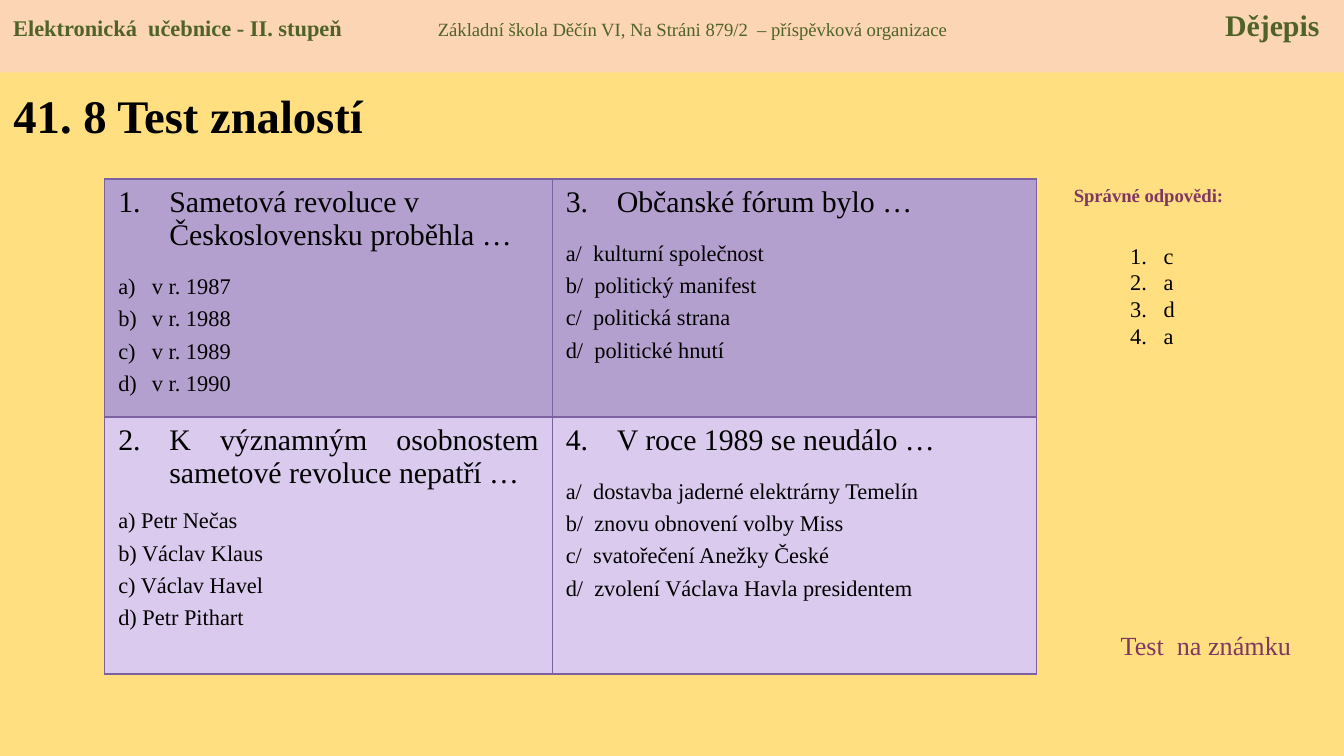
from dataclasses import dataclass

from lxml.etree import SubElement
from pptx import Presentation
from pptx.dml.color import RGBColor
from pptx.enum.shapes import MSO_SHAPE
from pptx.enum.text import MSO_ANCHOR, MSO_AUTO_SIZE, PP_ALIGN
from pptx.oxml import parse_xml
from pptx.oxml.ns import nsdecls, qn
from pptx.util import Inches, Length, Pt

FONT = "Times New Roman"
COLOURS = {
    "background": "FFDF80",
    "header": "FCD5B5",
    "header_text": "4F6228",
    "text": "000000",
    "accent": "813763",
    "border": "7D60A0",
    "row_0": "B3A0CE",
    "row_1": "DACAED",
}
WIDTH = Inches(10)
HEIGHT = Length(WIDTH * 9 // 16)
COLUMN_SHARES = (33.3, 36)
ROW_SHARES = (31.5, 34)


@dataclass(frozen=True)
class Box:
    left: float
    top: float
    width: float
    height: float

    def place(self) -> tuple[Length, ...]:
        return (across(self.left), down(self.top), across(self.width), down(self.height))


@dataclass(frozen=True)
class Question:
    row: int
    column: int
    text: str
    answers: tuple[str, ...]
    gap: float = 12
    lettered: bool = False
    align: PP_ALIGN = PP_ALIGN.JUSTIFY


@dataclass(frozen=True)
class Label:
    box: Box
    text: str
    size: float
    bold: bool = False
    align: PP_ALIGN = PP_ALIGN.LEFT


@dataclass(frozen=True)
class HeaderPart:
    text: str
    size: float
    bold: bool


TITLE_BOX = Box(0, 9.43, 39, 11.57)
TABLE_BOX = Box(7.8, 23.68, sum(COLUMN_SHARES), sum(ROW_SHARES))
KEY_BOX = Box(83.1, 31.1, 5.5, 20)
HEADER_BOX = Box(0, 0, 100, 9.6)
HEADER_PARTS = (
    HeaderPart("Elektronická  učebnice - II. stupeň", 12, True),
    HeaderPart("\tZákladní škola Děčín VI, Na Stráni 879/2  – příspěvková organizace", 10, False),
    HeaderPart("\tDějepis", 16, True),
)
HEADER_TABS = ((31.6, "l"), (97.2, "r"))
LABELS = (
    Label(Box(77.6, 23.5, 15.7, 4.8), "Správné odpovědi:", 10, True, PP_ALIGN.CENTER),
    Label(Box(82.4, 82.4, 15.7, 6), "Test  na známku", 14),
)
KEY = ("c", "a", "d", "a")
QUESTIONS = (
    Question(0, 0, "Sametová revoluce v Československu proběhla …",
             ("v r. 1987", "v r. 1988", "v r. 1989", "v r. 1990"),
             lettered=True, align=PP_ALIGN.LEFT),
    Question(1, 0, "K významným osobnostem sametové revoluce nepatří …",
             ("a) Petr Nečas", "b) Václav Klaus", "c) Václav Havel", "d) Petr Pithart"), gap=10),
    Question(0, 1, "Občanské fórum bylo …",
             ("a/  kulturní společnost", "b/  politický manifest",
              "c/  politická strana", "d/  politické hnutí")),
    Question(1, 1, "V roce 1989 se neudálo …",
             ("a/  dostavba jaderné elektrárny Temelín", "b/  znovu obnovení volby Miss",
              "c/  svatořečení Anežky České", "d/  zvolení Václava Havla presidentem")),
)


def across(share: float) -> Length:
    return Length(int(WIDTH * share / 100))


def down(share: float) -> Length:
    return Length(int(HEIGHT * share / 100))


def colour(name: str) -> RGBColor:
    return RGBColor.from_string(COLOURS[name])


def style_font(font, size: float, colour_name: str = "text", bold: bool = False) -> None:
    font.name = FONT
    font.size = Pt(size)
    font.bold = bold
    font.color.rgb = colour(colour_name)


def add_number(paragraph, scheme: str, indent: float, start: int = 1) -> None:
    properties = paragraph._p.get_or_add_pPr()
    properties.set("marL", str(Inches(indent)))
    properties.set("indent", str(-Inches(indent)))
    SubElement(properties, qn("a:buFont"), typeface="+mj-lt")
    SubElement(properties, qn("a:buAutoNum"), type=scheme, startAt=str(start))


def next_paragraph(frame, index: int):
    return frame.add_paragraph() if index else frame.paragraphs[0]


def add_frame(slide, box: Box):
    frame = slide.shapes.add_textbox(*box.place()).text_frame
    frame.word_wrap = True
    return frame


def add_label(slide, label: Label) -> None:
    paragraph = add_frame(slide, label.box).paragraphs[0]
    paragraph.text = label.text
    paragraph.alignment = label.align
    style_font(paragraph.font, label.size, "accent", label.bold)


def add_key(slide) -> None:
    frame = add_frame(slide, KEY_BOX)
    for index, letter in enumerate(KEY):
        paragraph = next_paragraph(frame, index)
        paragraph.text = letter
        add_number(paragraph, "arabicPeriod", 0.25)
        style_font(paragraph.font, 12)


def format_title(slide) -> None:
    title = slide.shapes.title
    title.left, title.top, title.width, title.height = TITLE_BOX.place()
    frame = title.text_frame
    frame.auto_size = MSO_AUTO_SIZE.NONE
    frame.vertical_anchor = MSO_ANCHOR.MIDDLE
    paragraph = frame.paragraphs[0]
    paragraph.text = "41. 8 Test znalostí"
    paragraph.alignment = PP_ALIGN.LEFT
    style_font(paragraph.font, 25, bold=True)


def add_header(slide) -> None:
    header = slide.shapes.add_shape(MSO_SHAPE.RECTANGLE, *HEADER_BOX.place())
    header.shadow.inherit = False
    header.fill.solid()
    header.fill.fore_color.rgb = colour("header")
    header.line.fill.background()
    frame = header.text_frame
    frame.word_wrap = True
    frame.vertical_anchor = MSO_ANCHOR.TOP
    paragraph = frame.paragraphs[0]
    paragraph.alignment = PP_ALIGN.LEFT
    tabs = SubElement(paragraph._p.get_or_add_pPr(), qn("a:tabLst"))
    for share, align in HEADER_TABS:
        SubElement(tabs, qn("a:tab"), pos=str(across(share)), algn=align)
    for part in HEADER_PARTS:
        run = paragraph.add_run()
        run.text = part.text
        style_font(run.font, part.size, "header_text", part.bold)


def add_borders(cell) -> None:
    properties = cell._tc.get_or_add_tcPr()
    for index, side in enumerate(("lnL", "lnR", "lnT", "lnB")):
        properties.insert(index, parse_xml(
            f'<a:{side} {nsdecls("a")} w="{Pt(0.75)}"><a:solidFill>'
            f'<a:srgbClr val="{COLOURS["border"]}"/></a:solidFill></a:{side}>'))


def fill_cell(cell, question: Question, number: int) -> None:
    cell.fill.solid()
    cell.fill.fore_color.rgb = colour(f"row_{question.row}")
    add_borders(cell)
    frame = cell.text_frame
    for index, text in enumerate((question.text, *question.answers)):
        heading = index == 0
        paragraph = next_paragraph(frame, index)
        paragraph.text = text
        if heading:
            add_number(paragraph, "arabicPeriod", 0.38, number)
        elif question.lettered:
            add_number(paragraph, "alphaLcParenR", 0.25)
        paragraph.alignment = question.align if heading else PP_ALIGN.JUSTIFY
        paragraph.space_after = Pt(question.gap if heading else 4)
        style_font(paragraph.font, 16 if heading else 12)


def add_questions(slide) -> None:
    table = slide.shapes.add_table(
        len(ROW_SHARES), len(COLUMN_SHARES), *TABLE_BOX.place()).table
    table.first_row = table.horz_banding = False
    for column, share in zip(table.columns, COLUMN_SHARES):
        column.width = across(share)
    for row, share in zip(table.rows, ROW_SHARES):
        row.height = down(share)
    for number, question in enumerate(QUESTIONS, 1):
        fill_cell(table.cell(question.row, question.column), question, number)


def main() -> None:
    presentation = Presentation()
    presentation.slide_width, presentation.slide_height = WIDTH, HEIGHT
    slide = presentation.slides.add_slide(presentation.slide_layouts[5])
    slide.background.fill.solid()
    slide.background.fill.fore_color.rgb = colour("background")
    format_title(slide)
    add_questions(slide)
    for label in LABELS:
        add_label(slide, label)
    add_key(slide)
    add_header(slide)
    presentation.save("out.pptx")


if __name__ == "__main__":
    main()
